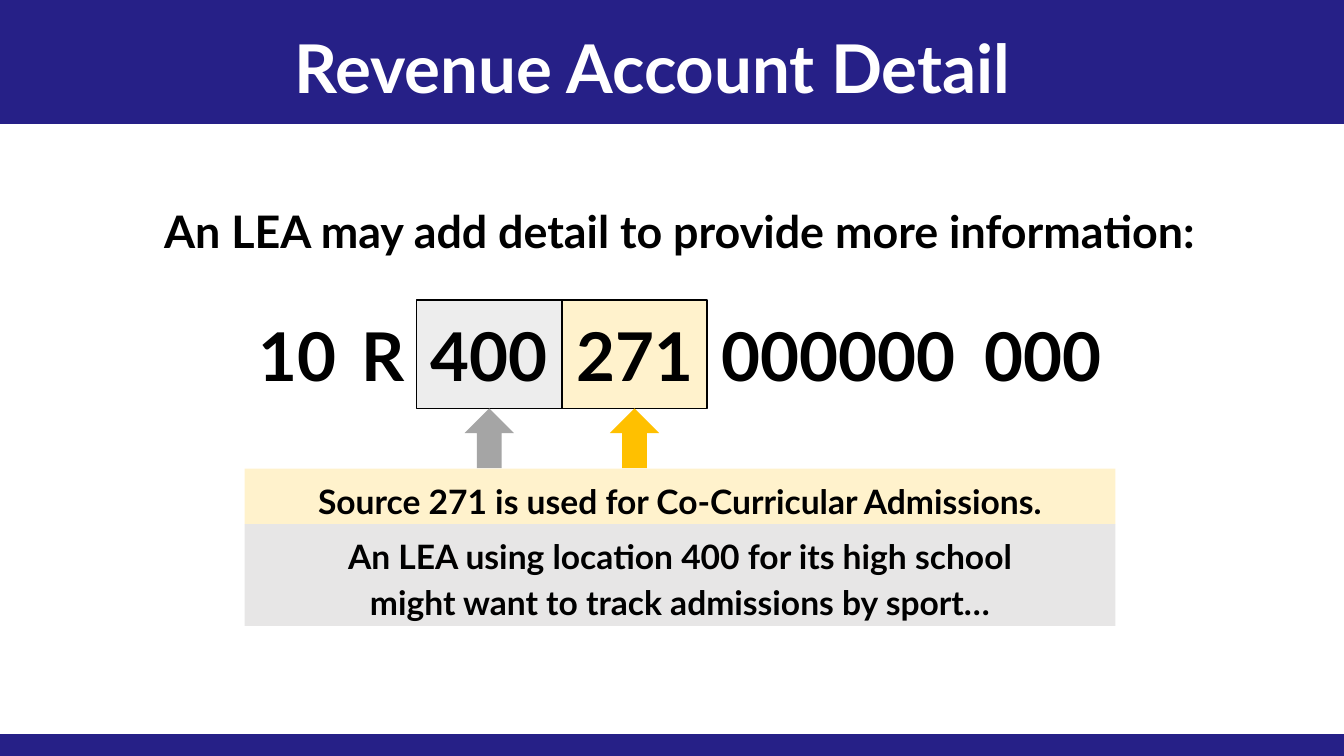
from pptx import Presentation
from pptx.dml.color import RGBColor
from pptx.enum.shapes import MSO_SHAPE
from pptx.enum.text import MSO_ANCHOR, MSO_AUTO_SIZE, PP_ALIGN
from pptx.util import Pt

RECTANGLE = MSO_SHAPE.RECTANGLE
UP_ARROW = MSO_SHAPE.UP_ARROW
TOP = MSO_ANCHOR.TOP
MIDDLE = MSO_ANCHOR.MIDDLE
CENTER = PP_ALIGN.CENTER
FIT_SHAPE = MSO_AUTO_SIZE.SHAPE_TO_FIT_TEXT

FONT = "Lato"
NAVY, WHITE, BLACK = "262087", "FFFFFF", "000000"
CREAM, PALE_GREY, LIGHT_GREY = "FFF2CC", "EDEDED", "E7E6E6"
GOLD, GREY = "FFC000", "A5A5A5"

SLIDE_WIDTH, SLIDE_HEIGHT = 720, 405
CODE_TOP, CODE_HEIGHT = 160.8, 58
CODE_BOTTOM = CODE_TOP + CODE_HEIGHT
ARROW_WIDTH, ARROW_HEIGHT = 26.4, 32
NOTE_LEFT, NOTE_WIDTH = 131, 466.6

# text, left, width, fill, arrow colour
CODE_PARTS = [
    ("10", 131, 57, None, None),
    ("R", 186.5, 38, None, None),
    ("400", 223.2, 77.8, PALE_GREY, GREY),
    ("271", 301, 77.8, CREAM, GOLD),
    ("000000", 378.8, 141, None, None),
    ("000", 519.8, 77.8, None, None),
]

# text, top, height, fill
NOTES = [
    ("Source 271 is used for Co-Curricular Admissions.", 251, 29.8, CREAM),
    ("An LEA using location 400 for its high school\n"
     "might want to track admissions by sport…", 280.8, 54.5, LIGHT_GREY),
]


def color(hex_string):
    return RGBColor.from_string(hex_string)


def add_block(slide, kind, left, top, width, height, fill, line=None, weight=1):
    block = slide.shapes.add_shape(kind, Pt(left), Pt(top), Pt(width), Pt(height))
    block.shadow.inherit = False
    block.fill.solid()
    block.fill.fore_color.rgb = color(fill)
    if line:
        block.line.color.rgb = color(line)
        block.line.width = Pt(weight)
    else:
        block.line.fill.background()
    return block


def add_text_box(slide, left, top, width, height):
    return slide.shapes.add_textbox(Pt(left), Pt(top), Pt(width), Pt(height))


def write(box, text, size, ink=BLACK, wrap=True, anchor=TOP, spacing=None):
    """Put one centred bold paragraph in a box; a newline is a line break."""
    frame = box.text_frame
    frame.word_wrap = wrap
    frame.auto_size = FIT_SHAPE
    frame.vertical_anchor = anchor
    para = frame.paragraphs[0]
    para.text = text
    para.alignment = CENTER
    if spacing:
        para.line_spacing = spacing
    for span in para.runs:
        span.font.name = FONT
        span.font.size = Pt(size)
        span.font.bold = True
        span.font.color.rgb = color(ink)


def add_code_part(slide, text, left, width, fill, arrow_fill):
    """Draw one part of the account code, with an arrow below if it has a colour."""
    place = (left, CODE_TOP, width, CODE_HEIGHT)
    if fill:
        box = add_block(slide, RECTANGLE, *place, fill, BLACK, 0.75)
    else:
        box = add_text_box(slide, *place)
    write(box, text, 36, wrap=False, anchor=MIDDLE)
    frame = box.text_frame
    frame.margin_left = frame.margin_right = Pt(7.2)
    frame.margin_top = frame.margin_bottom = Pt(7.2)
    if arrow_fill:
        arrow_left = left + (width - ARROW_WIDTH) / 2
        add_block(slide, UP_ARROW, arrow_left, CODE_BOTTOM,
                  ARROW_WIDTH, ARROW_HEIGHT, arrow_fill)


def add_note(slide, text, top, height, fill):
    note = add_block(slide, RECTANGLE, NOTE_LEFT, top, NOTE_WIDTH, height, fill)
    write(note, text, 18, spacing=1.14)


def main():
    deck = Presentation()
    deck.slide_width, deck.slide_height = Pt(SLIDE_WIDTH), Pt(SLIDE_HEIGHT)
    slide = deck.slides.add_slide(deck.slide_layouts[6])

    for top, height in ((0, 66), (394, 11)):
        add_block(slide, RECTANGLE, 0, top, SLIDE_WIDTH, height, NAVY, NAVY)

    title = add_text_box(slide, 114.5, 10.8, 470, 51)
    write(title, "Revenue Account Detail", 36, WHITE)
    lead = add_text_box(slide, 80, 105.8, 568, 36)
    write(lead, "An LEA may add detail to provide more information:", 24, wrap=False)

    for part in CODE_PARTS:
        add_code_part(slide, *part)
    for note in NOTES:
        add_note(slide, *note)

    deck.save("out.pptx")


if __name__ == "__main__":
    main()
